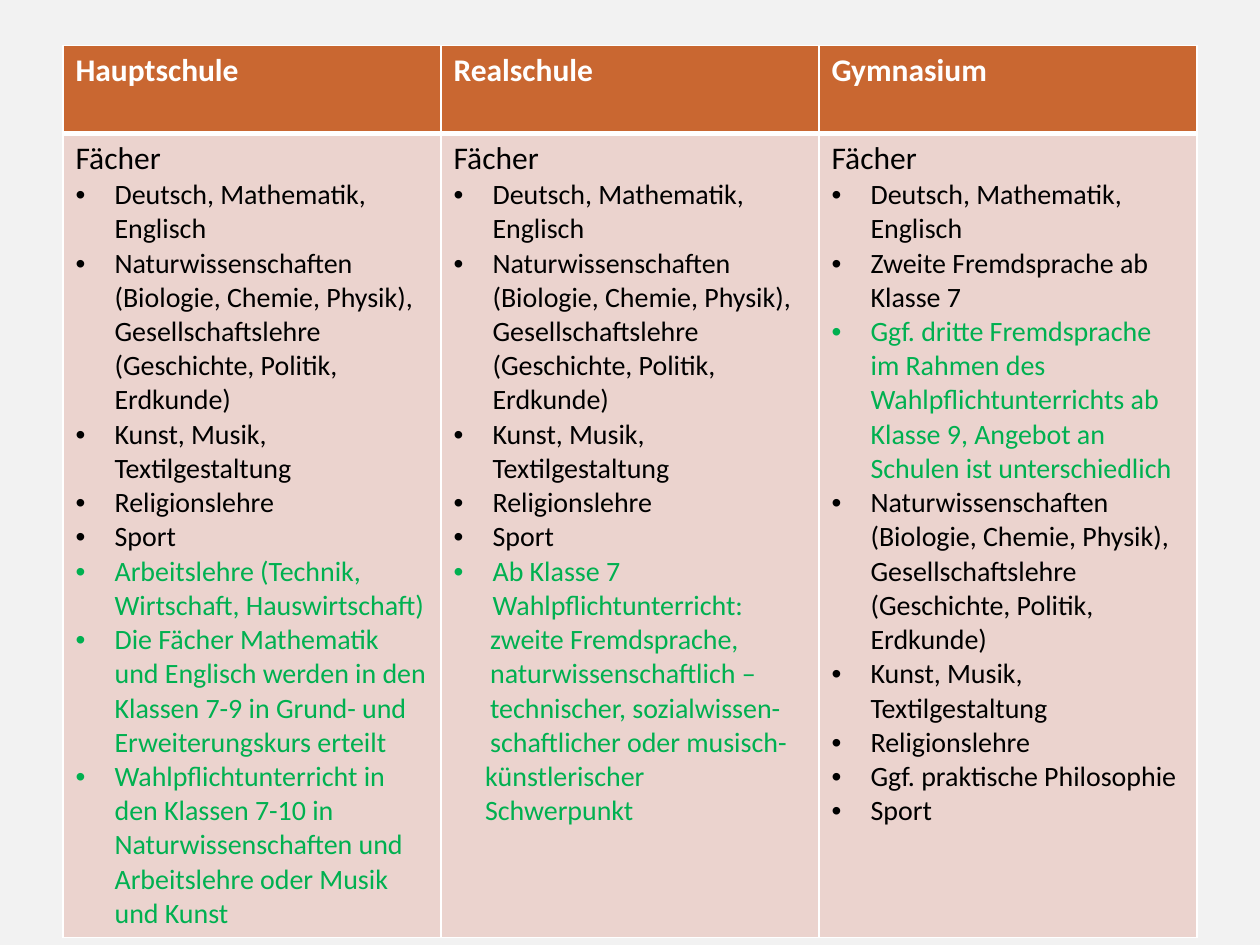
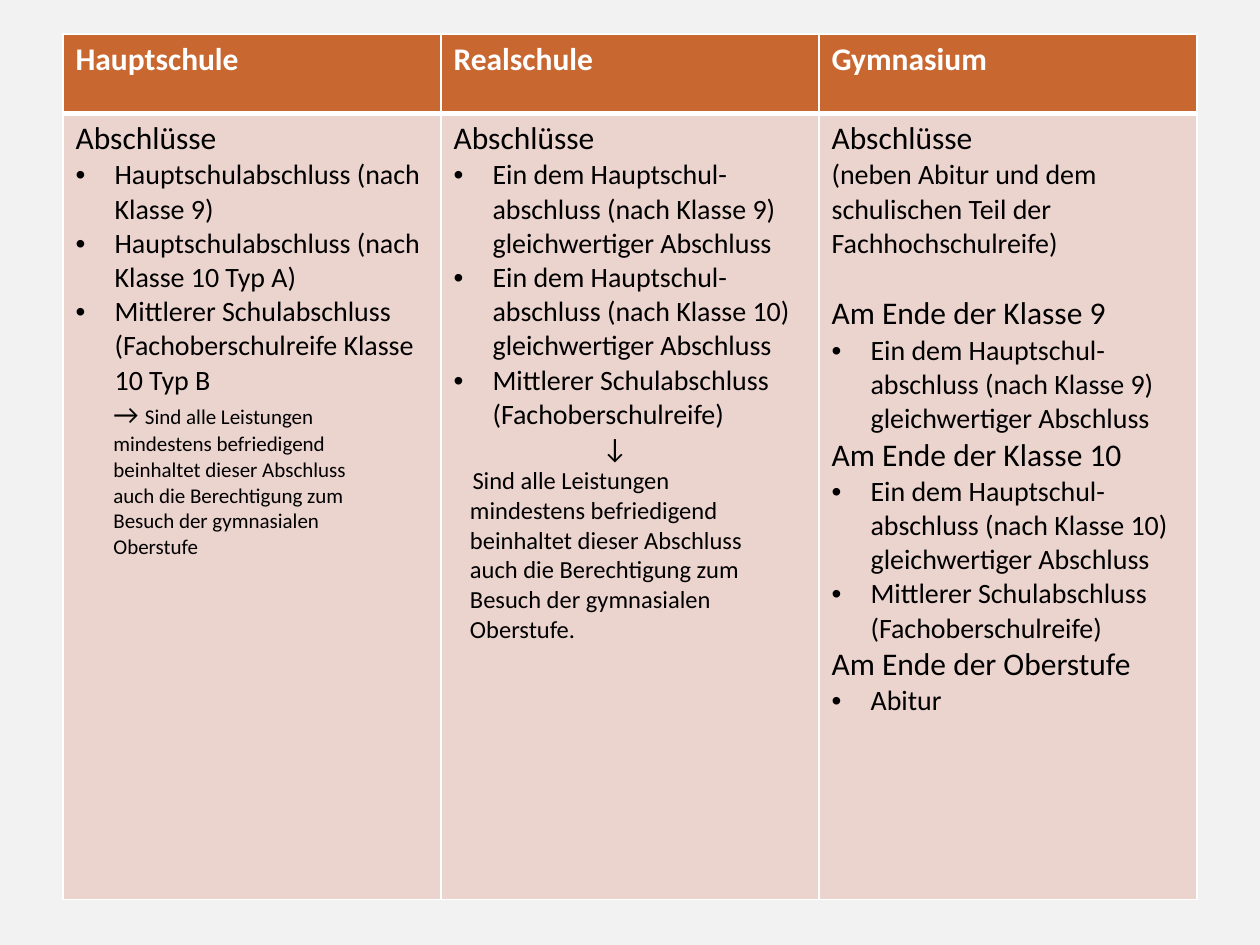
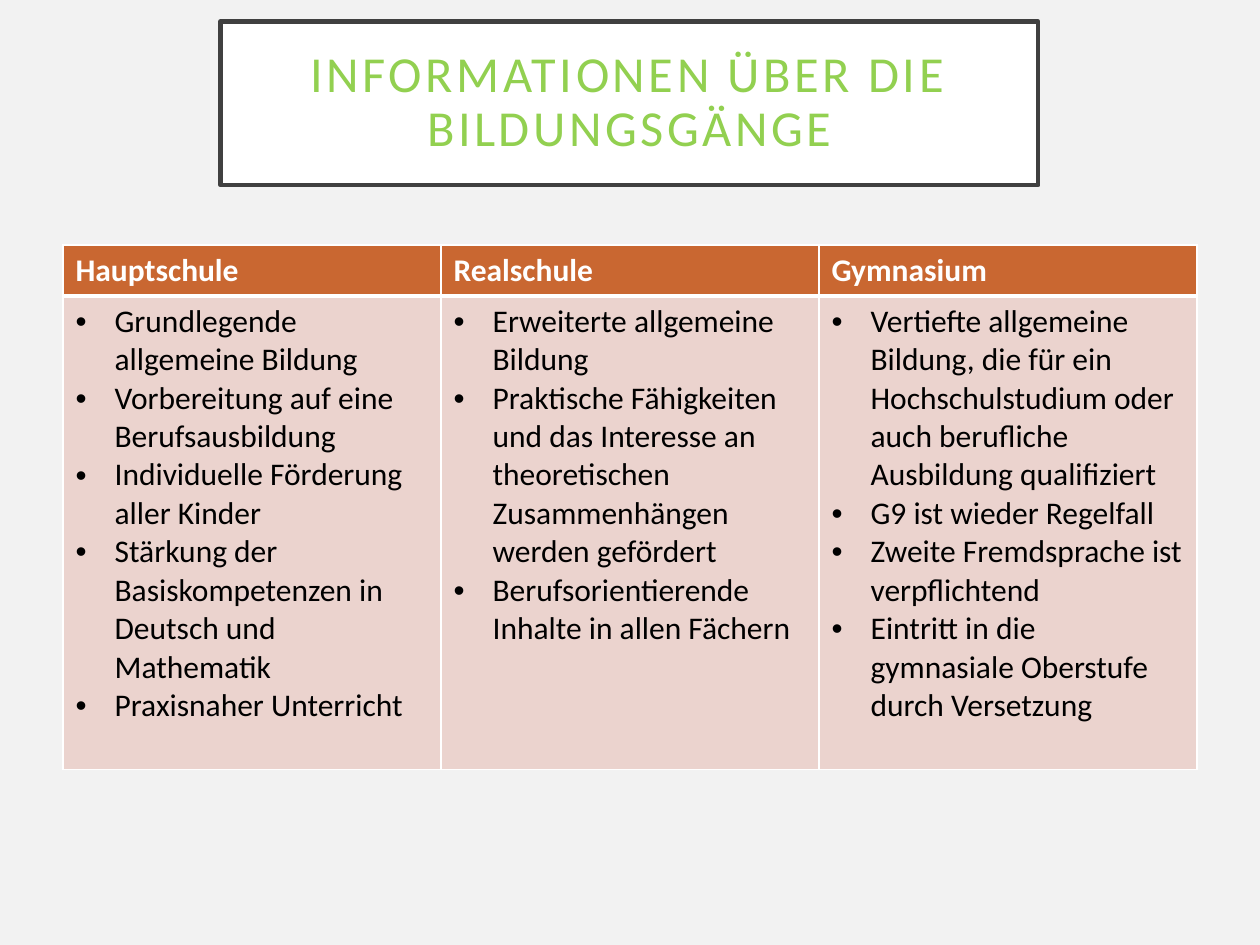
import pptx
import pptx.dml.color
import pptx.enum.text
import pptx.oxml.ns
import pptx.util
from lxml import etree

COLOURS = {
    "page": "F2F2F2", "header": "C96731", "body": "EBD3CE", "white": "FFFFFF",
    "text": "000000", "extra": "00B050", "title": "92D050", "frame": "404040",
}
FONT = "Calibri"
HANG = 0.31
STYLES = {
    "column": dict(size=18, colour="white", bold=True),
    "heading": dict(size=18),
    "later heading": dict(size=18, before=19.5),
    "lead": dict(size=16),
    "list": dict(size=16, left=HANG, bullet=True),
    "large list": dict(size=18, left=HANG, bullet=True),
    "extra list": dict(size=16, left=HANG, bullet=True, colour="extra"),
    "extra line": dict(size=16, left=0.29, colour="extra"),
    "extra end": dict(size=16, left=0.25, colour="extra"),
    "small note": dict(size=12, left=0.3),
    "note start": dict(size=14, left=0.15),
    "note": dict(size=14, left=0.13),
    "arrow": dict(size=16, left=1.18),
}
SCHOOLS = ["Hauptschule", "Realschule", "Gymnasium"]

LANGUAGES = "Deutsch, Mathematik, Englisch"
SCIENCES = ("Naturwissenschaften (Biologie, Chemie, Physik), "
            "Gesellschaftslehre (Geschichte, Politik, Erdkunde)")
ARTS = "Kunst, Musik, Textilgestaltung"
COMMON = [LANGUAGES, SCIENCES, ARTS, "Religionslehre", "Sport"]
AFTER_9, AFTER_10 = (
    f"Ein dem Hauptschul-abschluss (nach Klasse {n}) gleichwertiger Abschluss"
    for n in (9, 10))
MIDDLE = "Mittlerer Schulabschluss (Fachoberschulreife)"
GRADES = "Sind alle Leistungen"
UPPER_LEVEL = ["mindestens befriedigend", "beinhaltet dieser Abschluss",
               "auch die Berechtigung zum", "Besuch der gymnasialen"]

SUBJECTS = [
    [("heading", ["Fächer"]),
     ("list", COMMON),
     ("extra list", [
         "Arbeitslehre (Technik, Wirtschaft, Hauswirtschaft)",
         "Die Fächer Mathematik und Englisch werden in den Klassen 7-9 "
         "in Grund- und Erweiterungskurs erteilt",
         "Wahlpflichtunterricht in den Klassen 7-10 in Naturwissenschaften "
         "und Arbeitslehre oder Musik und Kunst"])],
    [("heading", ["Fächer"]),
     ("list", COMMON),
     ("extra list", ["Ab Klasse 7 Wahlpflichtunterricht:"]),
     ("extra line", ["zweite Fremdsprache,", "naturwissenschaftlich –",
                     "technischer, sozialwissen-", "schaftlicher oder musisch-"]),
     ("extra end", ["künstlerischer", "Schwerpunkt"])],
    [("heading", ["Fächer"]),
     ("list", [LANGUAGES, "Zweite Fremdsprache ab Klasse 7"]),
     ("extra list", ["Ggf. dritte Fremdsprache im Rahmen des Wahlpflichtunterrichts "
                     "ab Klasse 9, Angebot an Schulen ist unterschiedlich"]),
     ("list", [SCIENCES, ARTS, "Religionslehre", "Ggf. praktische Philosophie",
               "Sport"])],
]
DEGREES = [
    [("heading", ["Abschlüsse"]),
     ("list", ["Hauptschulabschluss (nach Klasse 9)",
               "Hauptschulabschluss (nach Klasse 10 Typ A)",
               "Mittlerer Schulabschluss (Fachoberschulreife Klasse 10 Typ B"]),
     ("small note", [[("→ ", 16), (GRADES, None)], *UPPER_LEVEL, "Oberstufe"])],
    [("heading", ["Abschlüsse"]),
     ("list", [AFTER_9, AFTER_10, MIDDLE]),
     ("arrow", ["↓"]),
     ("note start", [GRADES]),
     ("note", [*UPPER_LEVEL, "Oberstufe."])],
    [("heading", ["Abschlüsse"]),
     ("lead", ["(neben Abitur und dem schulischen Teil der Fachhochschulreife)"]),
     ("later heading", ["Am Ende der Klasse 9"]),
     ("list", [AFTER_9]),
     ("heading", ["Am Ende der Klasse 10"]),
     ("list", [AFTER_10, MIDDLE]),
     ("heading", ["Am Ende der Oberstufe"]),
     ("list", ["Abitur"])],
]
AIMS = [
    [("large list", [
        "Grundlegende allgemeine Bildung",
        "Vorbereitung auf eine Berufsausbildung",
        "Individuelle Förderung aller Kinder",
        "Stärkung der Basiskompetenzen in Deutsch und Mathematik",
        "Praxisnaher Unterricht"])],
    [("large list", [
        "Erweiterte allgemeine Bildung",
        "Praktische Fähigkeiten und das Interesse an theoretischen "
        "Zusammenhängen werden gefördert",
        "Berufsorientierende Inhalte in allen Fächern"])],
    [("large list", [
        "Vertiefte allgemeine Bildung, die für ein Hochschulstudium oder "
        "auch berufliche Ausbildung qualifiziert",
        "G9 ist wieder Regelfall",
        "Zweite Fremdsprache ist verpflichtend",
        "Eintritt in die gymnasiale Oberstufe durch Versetzung"])],
]


def rgb(name):
    """Return the named colour."""
    return pptx.dml.color.RGBColor.from_string(COLOURS[name])


def paint(fill, name):
    """Make a fill solid in the named colour."""
    fill.solid()
    fill.fore_color.rgb = rgb(name)


class Deck:
    """Hold the presentation style and the current slide."""

    def __init__(self):
        """Set the slide size and the shared background."""
        self.prs = pptx.Presentation()
        self.prs.slide_width = pptx.util.Inches(10)
        self.prs.slide_height = pptx.util.Inches(7.5)
        paint(self.prs.slide_master.background.fill, "page")

    def x(self, percent):
        """Return a share of the slide's width."""
        return round(self.prs.slide_width * percent / 100)

    def y(self, percent):
        """Return a share of the slide's height."""
        return round(self.prs.slide_height * percent / 100)

    def slide(self, layout="Blank"):
        """Start a slide on the named layout."""
        self.s = self.prs.slides.add_slide(
            self.prs.slide_layouts.get_by_name(layout))

    def title(self, text):
        """Fill and frame the title placeholder."""
        sp = self.s.shapes.title
        sp.left, sp.top = self.x(17.5), self.y(2.27)
        sp.width, sp.height = self.x(64.9), self.y(17.33)
        paint(sp.fill, "white")
        sp.line.color.rgb = rgb("frame")
        sp.line.width = pptx.util.Pt(2.5)
        tf = sp.text_frame
        tf.text = text
        tf.auto_size = pptx.enum.text.MSO_AUTO_SIZE.NONE
        tf.word_wrap = True
        tf.vertical_anchor = pptx.enum.text.MSO_ANCHOR.MIDDLE
        tf.margin_left = tf.margin_right = pptx.util.Inches(0.2)
        tf.margin_top = tf.margin_bottom = pptx.util.Inches(0.2)
        p = tf.paragraphs[0]
        p.alignment = pptx.enum.text.PP_ALIGN.CENTER
        p.line_spacing = 0.9
        self.font(p.font, 28.8, "title")
        p.runs[0].font._element.set("spc", "200")

    def font(self, font, size, colour="text", bold=False):
        """Set the shared typeface with a size, colour and weight."""
        font.name, font.size, font.bold = FONT, pptx.util.Pt(size), bold
        font.color.rgb = rgb(colour)

    def paragraph(self, p, content, size, colour="text", bold=False,
                  left=0, bullet=False, before=0):
        """Write one paragraph from a string or from sized runs."""
        runs = [(content, None)] if isinstance(content, str) else content
        for text, own_size in runs:
            r = p.add_run()
            r.text = text
            if own_size:
                r.font.size = pptx.util.Pt(own_size)
        self.font(p.font, size, colour, bold)
        if before:
            p.space_before = pptx.util.Pt(before)
        pPr = p._p.get_or_add_pPr()
        pPr.set("marL", str(pptx.util.Inches(left)))
        if bullet:
            pPr.set("indent", str(-pptx.util.Inches(left)))
            face = etree.Element(pptx.oxml.ns.qn("a:buFont"), typeface="Arial")
            mark = etree.Element(pptx.oxml.ns.qn("a:buChar"), char="•")
            at = pPr.index(pPr.find(pptx.oxml.ns.qn("a:defRPr")))
            pPr[at:at] = [face, mark]

    def cell(self, cell, blocks, fill, bottom):
        """Fill a cell with styled blocks and white borders."""
        tf = cell.text_frame
        lines = [(style, text) for style, texts in blocks for text in texts]
        for i, (style, text) in enumerate(lines):
            p = tf.add_paragraph() if i else tf.paragraphs[0]
            self.paragraph(p, text, **STYLES[style])
        tcPr = cell._tc.get_or_add_tcPr()
        for side, width in dict(L=1, R=1, T=1, B=bottom).items():
            ln = etree.SubElement(tcPr, pptx.oxml.ns.qn(f"a:ln{side}"),
                                  w=str(pptx.util.Pt(width)))
            solid = etree.SubElement(ln, pptx.oxml.ns.qn("a:solidFill"))
            etree.SubElement(solid, pptx.oxml.ns.qn("a:srgbClr"),
                             val=COLOURS["white"])
        paint(cell.fill, fill)

    def comparison(self, columns, top, header, body):
        """Add the table that compares the three schools."""
        table = self.s.shapes.add_table(
            2, len(SCHOOLS), self.x(5), self.y(top),
            self.x(90), self.y(header + body)).table
        table.rows[0].height = self.y(header)
        table.rows[1].height = self.y(body)
        for i, (school, blocks) in enumerate(zip(SCHOOLS, columns)):
            self.cell(table.cell(0, i), [("column", [school])], "header", 3)
            self.cell(table.cell(1, i), blocks, "body", 1)
            edge = table.cell(1, i)._tc.tcPr.find(pptx.oxml.ns.qn("a:lnT"))
            edge.set("w", str(pptx.util.Pt(3)))


def main():
    """Build the three slides."""
    deck = Deck()
    deck.slide()
    deck.comparison(SUBJECTS, top=4.8, header=9.3, body=85.1)
    deck.slide()
    deck.comparison(DEGREES, top=3.6, header=8.4, body=83.2)
    deck.slide("Title Only")
    deck.title("INFORMATIONEN ÜBER DIE BILDUNGSGÄNGE")
    deck.comparison(AIMS, top=25.9, header=5.4, body=50.1)
    deck.prs.save("out.pptx")


if __name__ == "__main__":
    main()
